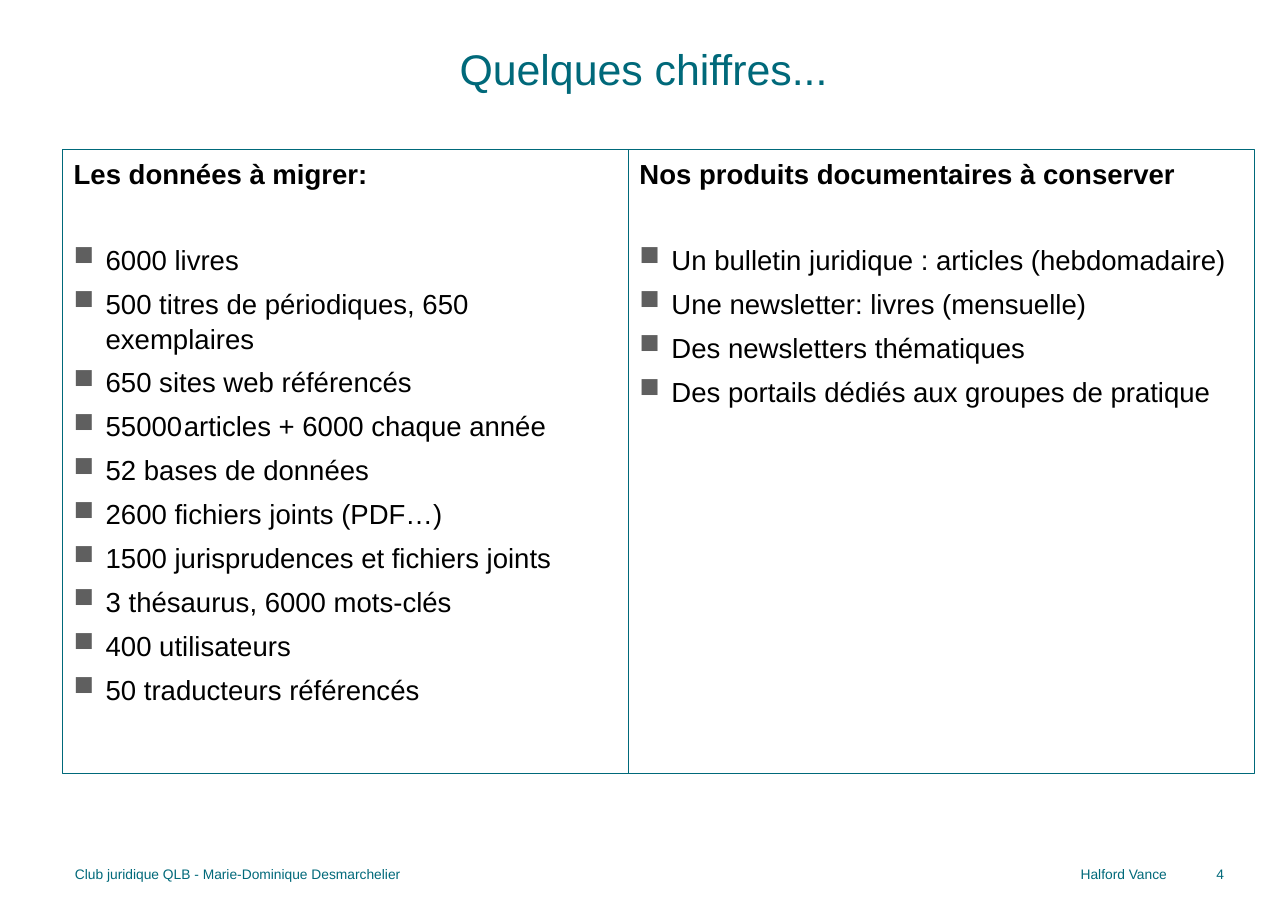
from lxml import etree
from pptx import Presentation
from pptx.dml.color import RGBColor
from pptx.enum.shapes import MSO_SHAPE
from pptx.enum.text import MSO_ANCHOR, PP_ALIGN
from pptx.oxml.ns import qn
from pptx.util import Pt

RECTANGLE = MSO_SHAPE.RECTANGLE
TOP, MIDDLE = MSO_ANCHOR.TOP, MSO_ANCHOR.MIDDLE
LEFT, CENTER, RIGHT = PP_ALIGN.LEFT, PP_ALIGN.CENTER, PP_ALIGN.RIGHT
TEAL = RGBColor(0x00, 0x69, 0x7A)
BLACK = RGBColor(0x00, 0x00, 0x00)
BULLET_GREY = RGBColor(0x5F, 0x5F, 0x5F)

MARGIN = 41.1
FOOTER_TOP, FOOTER_HEIGHT = 558.7, 25.2
PANEL_TOP, PANEL_HEIGHT = 97.9, 407.5

MIGRATION = [
    "6000 livres",
    "500 titres de périodiques, 650 exemplaires",
    "650 sites web référencés",
    "55000\tarticles + 6000 chaque année",
    "52 bases de données",
    "2600 fichiers joints (PDF…)",
    "1500 jurisprudences et fichiers joints",
    "3 thésaurus, 6000 mots-clés",
    "400 utilisateurs",
    "50 traducteurs référencés",
]
PRODUCTS = [
    "Un bulletin juridique : articles (hebdomadaire)",
    "Une newsletter: livres (mensuelle)",
    "Des newsletters thématiques",
    "Des portails dédiés aux groupes de pratique",
]


class SlideBuilder:
    """Draws styled text and bulleted panels on one slide."""

    font_name = "Arial"
    body_size = 18
    indent = 20.9
    space_after = 6
    line_spacing = 1.05

    def __init__(self, slide):
        self.slide = slide

    def style(self, paragraph, size, color, bold=False):
        font = paragraph.font
        font.name, font.size, font.bold = self.font_name, Pt(size), bold
        font.color.rgb = color

    def text(self, content, left, top, width, height, size, align=LEFT, anchor=MIDDLE):
        box = self.slide.shapes.add_textbox(Pt(left), Pt(top), Pt(width), Pt(height))
        frame = box.text_frame
        frame.word_wrap = True
        frame.vertical_anchor = anchor
        frame.margin_left = frame.margin_right = Pt(7.9)
        frame.margin_top = frame.margin_bottom = Pt(4.3)
        paragraph = frame.paragraphs[0]
        paragraph.text = content
        paragraph.alignment = align
        self.style(paragraph, size, TEAL)

    def bullet(self, paragraph):
        properties = paragraph._p.get_or_add_pPr()
        properties.set("marL", str(Pt(self.indent)))
        properties.set("indent", str(-Pt(self.indent)))
        color = etree.Element(qn("a:buClr"))
        etree.SubElement(color, qn("a:srgbClr"), val=str(BULLET_GREY))
        character = etree.Element(qn("a:buChar"), char="■")
        position = properties.index(properties.find(qn("a:defRPr")))
        properties[position:position] = [color, character]

    def panel(self, heading, items, left, width):
        shape = self.slide.shapes.add_shape(
            RECTANGLE, Pt(left), Pt(PANEL_TOP), Pt(width), Pt(PANEL_HEIGHT))
        shape.shadow.inherit = False
        shape.fill.background()
        shape.line.color.rgb = TEAL
        shape.line.width = Pt(0.75)
        frame = shape.text_frame
        frame.word_wrap = True
        frame.vertical_anchor = TOP
        heading_gap = 2 * self.space_after + self.body_size * 1.2
        for number, content in enumerate([heading, *items]):
            is_heading = number == 0
            paragraph = frame.paragraphs[0] if is_heading else frame.add_paragraph()
            paragraph.text = content
            paragraph.alignment = LEFT
            paragraph.line_spacing = self.line_spacing
            paragraph.space_after = Pt(heading_gap if is_heading else self.space_after)
            self.style(paragraph, self.body_size, BLACK, bold=is_heading)
            if not is_heading:
                self.bullet(paragraph)


def main():
    presentation = Presentation()
    presentation.slide_width, presentation.slide_height = Pt(841.7), Pt(595.4)
    slide = presentation.slides.add_slide(presentation.slide_layouts[6])
    builder = SlideBuilder(slide)
    builder.text("Quelques chiffres...", MARGIN, 23.8, 758.9, 99.4, 28, CENTER, TOP)
    builder.panel("Les données à migrer:", MIGRATION, MARGIN, 369.7)
    builder.panel("Nos produits documentaires à conserver", PRODUCTS, 410.8, 409)
    footers = [
        ("Club juridique QLB - Marie-Dominique Desmarchelier", MARGIN, 540.7, LEFT),
        ("Halford Vance", 581.8, 188.6, RIGHT),
        ("4", 770.4, 37.4, RIGHT),
    ]
    for content, left, width, align in footers:
        builder.text(content, left, FOOTER_TOP, width, FOOTER_HEIGHT, 9, align)
    presentation.save("out.pptx")


if __name__ == "__main__":
    main()
